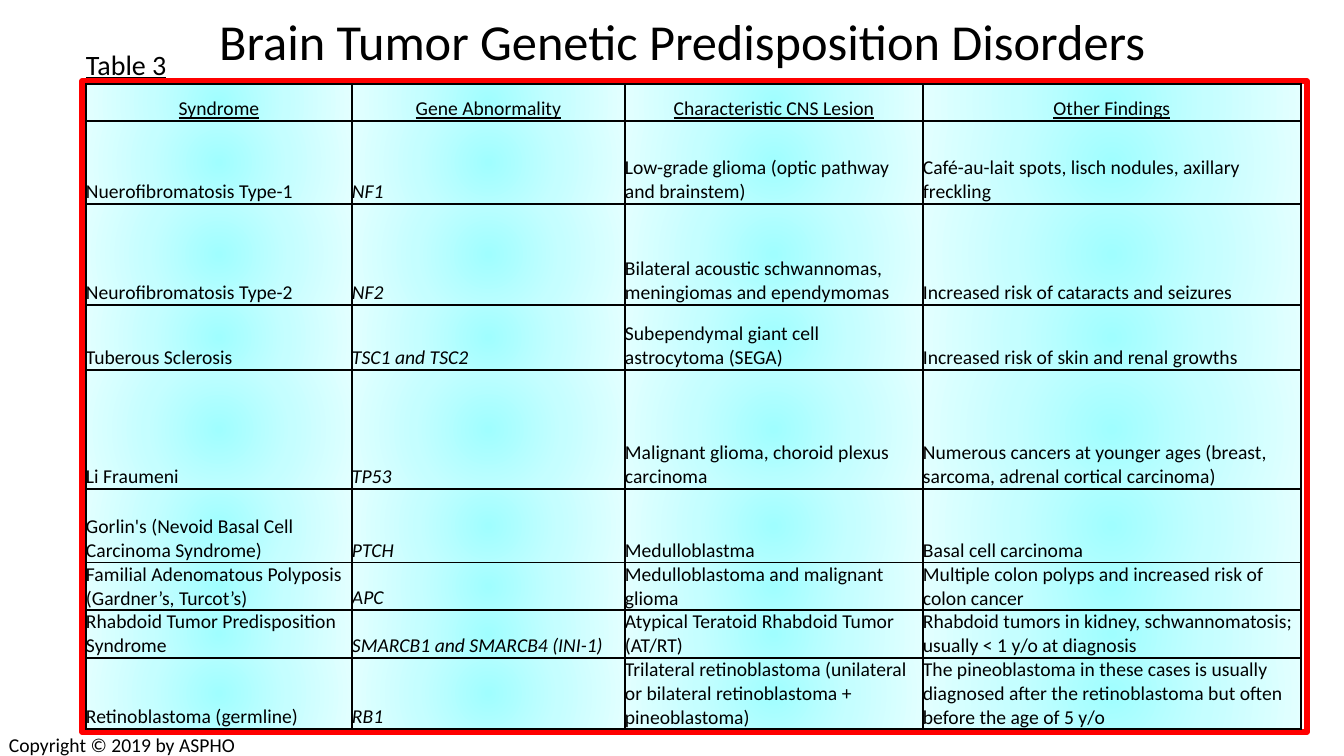
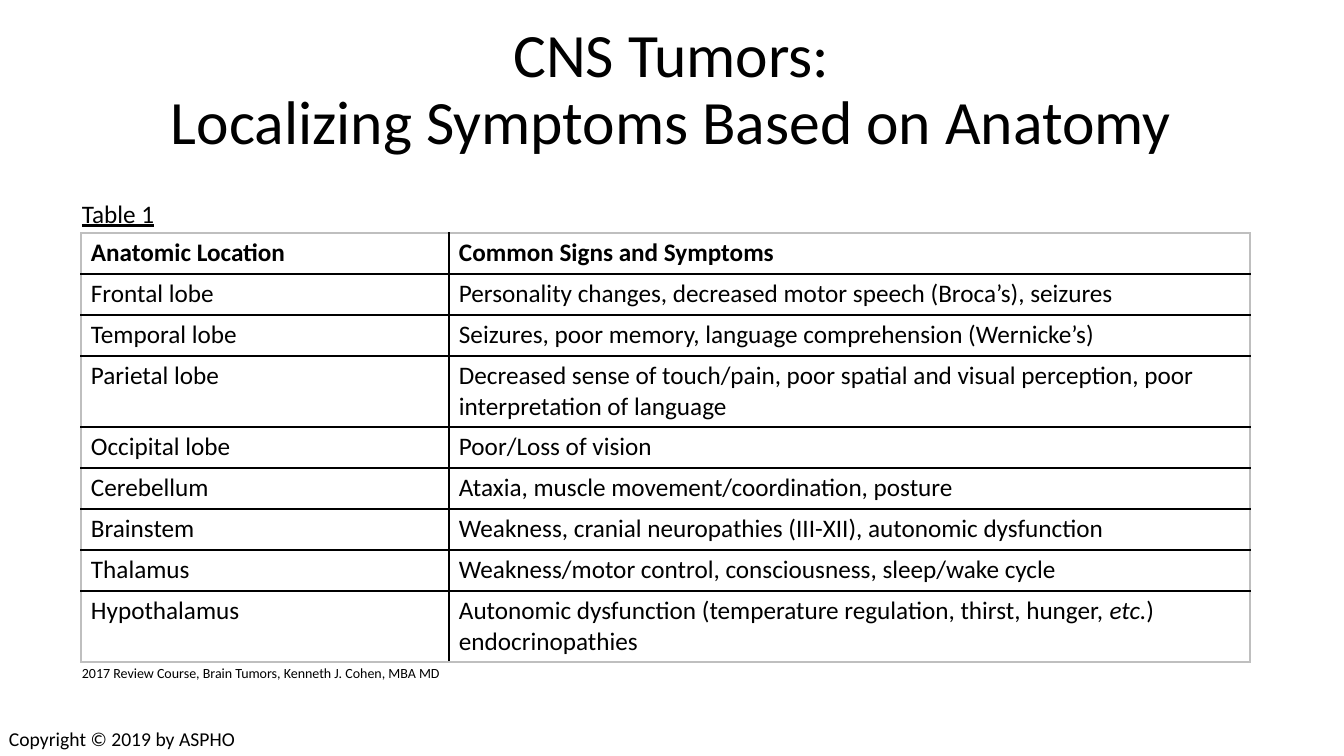
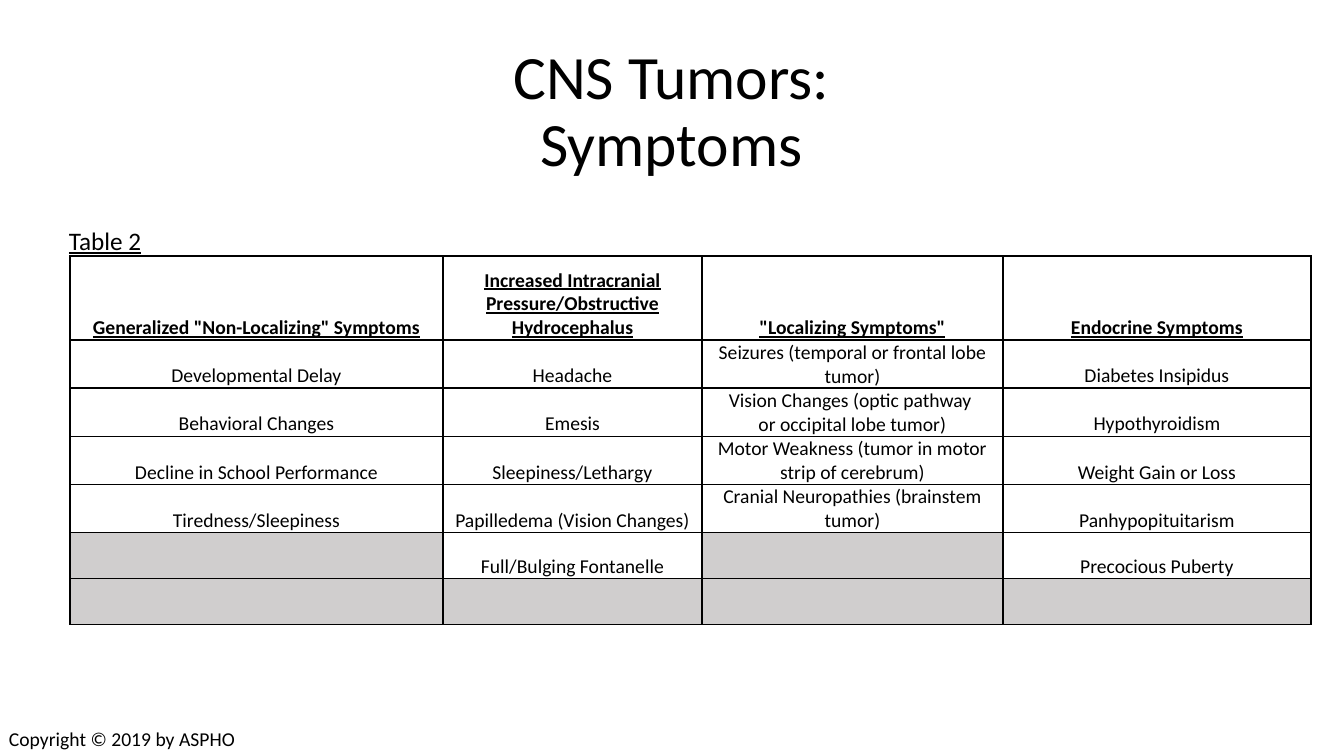
from dataclasses import dataclass

import pptx
import pptx.dml.color
import pptx.enum.shapes
import pptx.enum.text
import pptx.oxml
import pptx.oxml.ns
import pptx.util

RGBColor = pptx.dml.color.RGBColor
Align = pptx.enum.text.PP_ALIGN
Anchor = pptx.enum.text.MSO_ANCHOR

BLACK = RGBColor(0x00, 0x00, 0x00)
WHITE = RGBColor(0xFF, 0xFF, 0xFF)
RED = RGBColor(0xFF, 0x00, 0x00)
GREY = RGBColor(0xD0, 0xCE, 0xCE)
PALE_EDGE = RGBColor(0xBF, 0xBF, 0xBF)
AQUA_STOPS = (
    (0, RGBColor(0xA0, 0xFE, 0xFF)),
    (50, RGBColor(0xC5, 0xFE, 0xFF)),
    (100, RGBColor(0xE3, 0xFF, 0xFF)),
)

FONT = "Calibri"
EMU_PER_PX = 914400 / 100.8
SLIDE_SIZE = (1344, 756)
COPYRIGHT = "Copyright © 2019 by ASPHO"


@dataclass(frozen=True)
class Box:
    left: int
    top: int
    width: int
    height: int


@dataclass(frozen=True)
class TextStyle:
    size: int
    bold: bool = False
    underline: bool = False
    align: Align = Align.LEFT


@dataclass(frozen=True)
class TableSpec:
    """Cell text uses *...* for italics and a line feed for a new paragraph."""
    left: int
    top: int
    columns: tuple[int, ...]
    rows: tuple[int, ...]
    cells: tuple[tuple[str, ...], ...]
    header: TextStyle
    body: TextStyle
    margins: tuple[int, int, int, int]  # left, top, right, bottom
    anchor: Anchor
    outer_edge: RGBColor = BLACK
    aqua: bool = False


@dataclass(frozen=True)
class SlideSpec:
    title: str
    title_box: Box
    title_size: int
    label: str
    label_box: Box
    label_size: int
    copyright_top: int
    table: TableSpec
    frame: Box | None = None
    source: str = ""


def px(length: float) -> pptx.util.Emu:
    return pptx.util.Emu(round(length * EMU_PER_PX))


def place(box: Box) -> tuple[pptx.util.Emu, ...]:
    return px(box.left), px(box.top), px(box.width), px(box.height)


def format_run(run, style: TextStyle, italic: bool = False) -> None:
    run.font.name = FONT
    run.font.size = pptx.util.Pt(style.size)
    run.font.bold = style.bold
    run.font.italic = italic
    run.font.underline = style.underline
    run.font.color.rgb = BLACK


def add_text(slide, box: Box, text: str, style: TextStyle,
             anchor: Anchor = Anchor.TOP, line_spacing: float = 1.0) -> None:
    frame = slide.shapes.add_textbox(*place(box)).text_frame
    frame.word_wrap = True
    frame.vertical_anchor = anchor
    frame.text = text
    for paragraph in frame.paragraphs:
        paragraph.alignment = style.align
        paragraph.line_spacing = line_spacing
        for run in paragraph.runs:
            format_run(run, style)


def add_frame(slide, box: Box) -> None:
    frame = slide.shapes.add_shape(
        pptx.enum.shapes.MSO_SHAPE.RECTANGLE, *place(box))
    frame.shadow.inherit = False
    frame.fill.background()
    frame.line.color.rgb = RED
    frame.line.width = pptx.util.Pt(4)


def set_border(cell, side: str, color: RGBColor) -> None:
    cell._tc.get_or_add_tcPr().append(pptx.oxml.parse_xml(
        f'<a:ln{side} {pptx.oxml.ns.nsdecls("a")} w="12700">'
        f'<a:solidFill><a:srgbClr val="{color}"/></a:solidFill></a:ln{side}>'))


def fill_aqua(cell) -> None:
    stops = "".join(
        f'<a:gs pos="{percent * 1000}"><a:srgbClr val="{color}"/></a:gs>'
        for percent, color in AQUA_STOPS)
    cell._tc.get_or_add_tcPr().append(pptx.oxml.parse_xml(
        f'<a:gradFill {pptx.oxml.ns.nsdecls("a")}><a:gsLst>{stops}</a:gsLst>'
        '<a:path path="circle"><a:fillToRect l="50000" t="50000" r="50000" '
        'b="50000"/></a:path></a:gradFill>'))


def write_cell(cell, text: str, style: TextStyle) -> None:
    cell.text_frame.text = text
    for paragraph, line in zip(cell.text_frame.paragraphs, text.split("\n")):
        paragraph.alignment = style.align
        paragraph.text = ""
        for index, piece in enumerate(line.split("*")):
            if piece:
                run = paragraph.add_run()
                run.text = piece
                format_run(run, style, italic=index % 2 == 1)


def add_table(slide, spec: TableSpec) -> None:
    box = Box(spec.left, spec.top, sum(spec.columns), sum(spec.rows))
    last_row, last_column = len(spec.rows) - 1, len(spec.columns) - 1
    table = slide.shapes.add_table(
        last_row + 1, last_column + 1, *place(box)).table
    table.first_row = table.horz_banding = False
    for column, width in zip(table.columns, spec.columns):
        column.width = px(width)
    for row, height in zip(table.rows, spec.rows):
        row.height = px(height)

    for r, texts in enumerate(spec.cells):
        for c, text in enumerate(texts):
            cell = table.cell(r, c)
            (cell.margin_left, cell.margin_top,
             cell.margin_right, cell.margin_bottom) = map(px, spec.margins)
            cell.vertical_anchor = spec.anchor
            write_cell(cell, text, spec.header if r == 0 else spec.body)
            outer = {"L": c == 0, "R": c == last_column,
                     "T": r == 0, "B": r == last_row}
            for side, is_outer in outer.items():
                set_border(cell, side, spec.outer_edge if is_outer else BLACK)
            if spec.aqua:
                fill_aqua(cell)
            else:
                cell.fill.solid()
                cell.fill.fore_color.rgb = WHITE if text else GREY


def add_slide(deck, spec: SlideSpec) -> None:
    slide = deck.slides.add_slide(deck.slide_layouts[6])
    add_text(slide, spec.title_box, spec.title,
             TextStyle(spec.title_size, align=Align.CENTER),
             Anchor.MIDDLE, 0.9)
    add_text(slide, spec.label_box, spec.label,
             TextStyle(spec.label_size, underline=True))
    if spec.frame:
        add_frame(slide, spec.frame)
    add_table(slide, spec.table)
    if spec.source:
        add_text(slide, Box(72, 660, 672, 27), spec.source, TextStyle(10))
    add_text(slide, Box(-1, spec.copyright_top, 250, 34), COPYRIGHT,
             TextStyle(14))


DISORDERS = TableSpec(
    left=86, top=84,
    columns=(266, 273, 298, 378),
    rows=(37, 83, 101, 65, 119, 74, 47, 48, 71),
    header=TextStyle(14, underline=True, align=Align.CENTER),
    body=TextStyle(14),
    margins=(0, 0, 0, 0), anchor=Anchor.BOTTOM, aqua=True,
    cells=(
        ("Syndrome", "Gene Abnormality", "Characteristic CNS Lesion",
         "Other Findings"),
        ("Nuerofibromatosis Type-1", "*NF1*",
         "Low-grade glioma (optic pathway and brainstem)",
         "Café-au-lait spots, lisch nodules, axillary freckling"),
        ("Neurofibromatosis Type-2", "*NF2*",
         "Bilateral acoustic schwannomas, meningiomas and ependymomas",
         "Increased risk of cataracts and seizures"),
        ("Tuberous Sclerosis", "*TSC1 and TSC2*",
         "Subependymal giant cell astrocytoma (SEGA)",
         "Increased risk of skin and renal growths"),
        ("Li Fraumeni", "*TP53*",
         "Malignant glioma, choroid plexus carcinoma",
         "Numerous cancers at younger ages (breast, sarcoma, adrenal "
         "cortical carcinoma)"),
        ("Gorlin's (Nevoid Basal Cell Carcinoma Syndrome)", "*PTCH*",
         "Medulloblastma", "Basal cell carcinoma"),
        ("Familial Adenomatous Polyposis (Gardner’s, Turcot’s)", "*APC*",
         "Medulloblastoma and malignant glioma",
         "Multiple colon polyps and increased risk of colon cancer"),
        ("Rhabdoid Tumor Predisposition Syndrome",
         "*SMARCB1 and SMARCB4 (INI-1)*",
         "Atypical Teratoid Rhabdoid Tumor (AT/RT)",
         "Rhabdoid tumors in kidney, schwannomatosis; usually < 1 y/o at "
         "diagnosis"),
        ("Retinoblastoma (germline)", "*RB1*",
         "Trilateral retinoblastoma (unilateral or bilateral "
         "retinoblastoma + pineoblastoma)",
         "The pineoblastoma in these cases is usually diagnosed after the "
         "retinoblastoma but often before the age of 5 y/o"),
    ),
)

LOCATIONS = TableSpec(
    left=81, top=233,
    columns=(368, 801),
    rows=(41, 41, 41, 71, 41, 41, 41, 41, 71),
    header=TextStyle(18, bold=True),
    body=TextStyle(18),
    margins=(10, 5, 10, 5), anchor=Anchor.TOP, outer_edge=PALE_EDGE,
    cells=(
        ("Anatomic Location", "Common Signs and Symptoms"),
        ("Frontal lobe",
         "Personality changes, decreased motor speech (Broca’s), seizures"),
        ("Temporal lobe",
         "Seizures, poor memory, language comprehension (Wernicke’s)"),
        ("Parietal lobe",
         "Decreased sense of touch/pain, poor spatial and visual "
         "perception, poor interpretation of language"),
        ("Occipital lobe", "Poor/Loss of vision"),
        ("Cerebellum", "Ataxia, muscle movement/coordination, posture"),
        ("Brainstem",
         "Weakness, cranial neuropathies (III-XII), autonomic dysfunction"),
        ("Thalamus", "Weakness/motor control, consciousness, sleep/wake cycle"),
        ("Hypothalamus",
         "Autonomic dysfunction (temperature regulation, thirst, hunger, "
         "*etc.*) endocrinopathies"),
    ),
)

SYMPTOMS = TableSpec(
    left=70, top=256,
    columns=(373, 259, 301, 308),
    rows=(84, 48, 48, 48, 48, 46, 46),
    header=TextStyle(14, bold=True, underline=True, align=Align.CENTER),
    body=TextStyle(14, align=Align.CENTER),
    margins=(1, 1, 1, 0), anchor=Anchor.BOTTOM,
    cells=(
        ('Generalized "Non-Localizing" Symptoms',
         "Increased Intracranial Pressure/Obstructive Hydrocephalus",
         '"Localizing Symptoms"', "Endocrine Symptoms"),
        ("Developmental Delay", "Headache",
         "Seizures (temporal or frontal lobe tumor)", "Diabetes Insipidus"),
        ("Behavioral Changes", "Emesis",
         "Vision Changes (optic pathway \nor occipital lobe tumor)",
         "Hypothyroidism"),
        ("Decline in School Performance", "Sleepiness/Lethargy",
         "Motor Weakness (tumor in motor strip of cerebrum)",
         "Weight Gain or Loss"),
        ("Tiredness/Sleepiness", "Papilledema (Vision Changes)",
         "Cranial Neuropathies (brainstem tumor)", "Panhypopituitarism"),
        ("", "Full/Bulging Fontanelle", "", "Precocious Puberty"),
        ("", "", "", ""),
    ),
)

SLIDES = (
    SlideSpec(
        title="Brain Tumor Genetic Predisposition Disorders",
        title_box=Box(103, -29, 1159, 146), title_size=36,
        label="Table 3", label_box=Box(76, 43, 200, 44), label_size=20,
        copyright_top=728, table=DISORDERS, frame=Box(82, 81, 1225, 651)),
    SlideSpec(
        title="CNS Tumors:\vLocalizing Symptoms Based on Anatomy",
        title_box=Box(92, 18, 1159, 146), title_size=44,
        label="Table 1", label_box=Box(72, 193, 200, 40), label_size=18,
        copyright_top=722, table=LOCATIONS,
        source="2017 Review Course, Brain Tumors, Kenneth J. Cohen, MBA MD"),
    SlideSpec(
        title="CNS Tumors:\vSymptoms",
        title_box=Box(92, 40, 1159, 146), title_size=44,
        label="Table 2", label_box=Box(59, 220, 200, 40), label_size=18,
        copyright_top=722, table=SYMPTOMS),
)


def main() -> None:
    deck = pptx.Presentation()
    deck.slide_width, deck.slide_height = map(px, SLIDE_SIZE)
    for spec in SLIDES:
        add_slide(deck, spec)
    deck.save("out.pptx")


if __name__ == "__main__":
    main()
